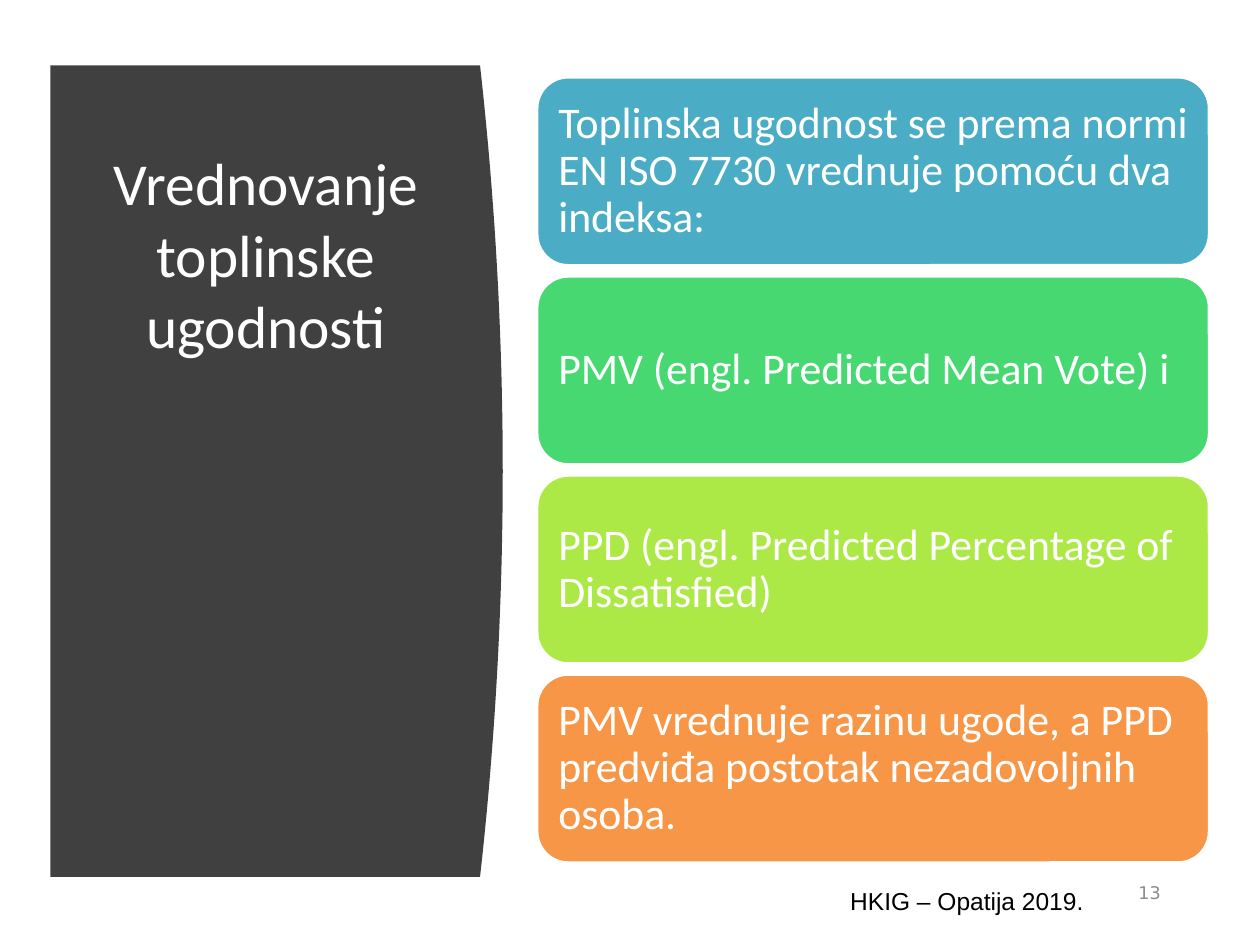
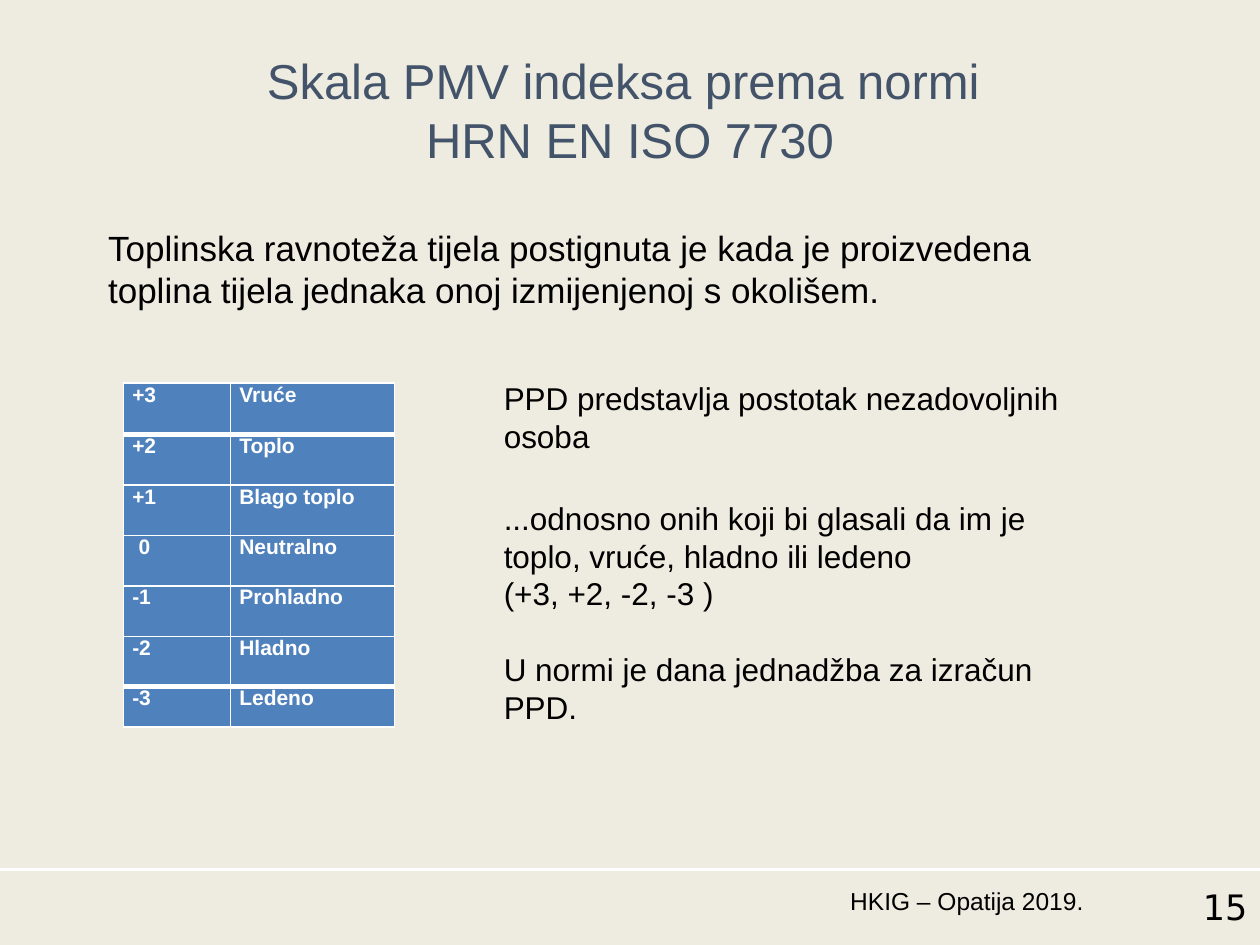
from lxml import etree
from pptx import Presentation
from pptx.dml.color import RGBColor
from pptx.enum.shapes import MSO_CONNECTOR, MSO_SHAPE
from pptx.enum.text import MSO_ANCHOR, MSO_AUTO_SIZE, PP_ALIGN
from pptx.oxml.ns import qn
from pptx.util import Inches, Pt

LEFT, CENTER, RIGHT = PP_ALIGN.LEFT, PP_ALIGN.CENTER, PP_ALIGN.RIGHT
TOP, MIDDLE = MSO_ANCHOR.TOP, MSO_ANCHOR.MIDDLE
FIXED = MSO_AUTO_SIZE.NONE
STRAIGHT = MSO_CONNECTOR.STRAIGHT
ROUNDED = MSO_SHAPE.ROUNDED_RECTANGLE

THEME = {
    "white": "FFFFFF",
    "sand": "EEECE1",
    "panel": "404040",
    "cards": ["4BACC6", "47D872", "ACE946", "F79646"],
    "cell": "4F81BD",
    "panel_title": ("Calibri", 34, "FFFFFF"),
    "title": ("Arial", 28, "435369"),
    "card": ("Calibri", 25, "FFFFFF"),
    "lead": ("Arial", 20, "000000"),
    "body": ("Arial", 18, "000000"),
    "table": ("Arial", 12, "FFFFFF"),
    "footer": ("Arial", 14, "000000"),
    "small_number": ("DejaVu Sans", 10, "8C8C8C"),
    "large_number": ("DejaVu Sans", 20, "000000"),
}


def rgb(name):
    return RGBColor.from_string(THEME.get(name, name))


def write(shape, lines, style, frame=None, para=None, box=None):
    if box:
        shape.left, shape.top, shape.width, shape.height = map(Inches, box)
    tf = shape.text_frame
    for key, value in {"word_wrap": True, "auto_size": FIXED,
                       "vertical_anchor": TOP, **(frame or {})}.items():
        setattr(tf, key, value)
    name, size, color = THEME[style]
    for i, line in enumerate(lines):
        p = tf.add_paragraph() if i else tf.paragraphs[0]
        p.text = line
        for key, value in {"alignment": LEFT, **(para or {})}.items():
            setattr(p, key, value)
        for r in p.runs:
            r.font.name, r.font.size = name, Pt(size)
            r.font.color.rgb = rgb(color)
            r.font.bold = style == "table"
    return tf


prs = Presentation()
prs.slide_width, prs.slide_height = Inches(10), Inches(7.5)

slides = []
for background, number, style, number_box in [
    ("white", "13", "small_number", (8.8, 6.95, 0.51, 0.4)),
    ("sand", "15", "large_number", (8.78, 6.98, 1.22, 0.52)),
]:
    s = prs.slides.add_slide(prs.slide_layouts[5])
    s.background.fill.solid()
    s.background.fill.fore_color.rgb = rgb(background)
    rule = s.shapes.add_connector(STRAIGHT, 0, Inches(6.9), Inches(10), Inches(6.9))
    rule.line.color.rgb = rgb("white")
    rule.line.width = Pt(1.5)
    etree.SubElement(rule._element.spPr, qn("a:effectLst"))
    for text, font, box in [
        ("HKIG – Opatija 2019.", "footer", (6.57, 6.98, 2.13, 0.52)),
        (number, style, number_box),
    ]:
        sp = s.shapes.add_textbox(*map(Inches, box))
        write(sp, [text], font, para={"alignment": RIGHT})
    slides.append(s)

s = slides[0]
panel_left, panel_top, panel_bottom = 0.4, 0.52, 6.96
edge, bulge, steps = 3.81, 0.18, 40
curve = []
for i in range(steps + 1):
    t = i / steps
    x = edge + bulge * 4 * t * (1 - t)
    y = panel_top + (panel_bottom - panel_top) * t
    curve.append((Inches(x), Inches(y)))
outline = s.shapes.build_freeform(Inches(panel_left), Inches(panel_top))
outline.add_line_segments(curve + [(Inches(panel_left), Inches(panel_bottom))])
panel = outline.convert_to_shape()
panel.shadow.inherit = False
panel.fill.solid()
panel.fill.fore_color.rgb = rgb("panel")
panel.line.fill.background()

title = s.shapes.title
write(title, ["Vrednovanje toplinske ugodnosti"], "panel_title",
      para={"alignment": CENTER}, box=(0.71, 1.11, 2.8, 5.24))
panel._element.addnext(title._element)

cards = [
    "Toplinska ugodnost se prema normi EN ISO 7730 vrednuje pomoću dva indeksa:",
    "PMV (engl. Predicted Mean Vote) i",
    "PPD (engl. Predicted Percentage of Dissatisfied)",
    "PMV vrednuje razinu ugode, a PPD predviđa postotak nezadovoljnih osoba.",
]
card_margins = {f"margin_{side}": Inches(0.1)
                for side in ("left", "top", "right", "bottom")}
for i, (text, color) in enumerate(zip(cards, THEME["cards"])):
    sp = s.shapes.add_shape(ROUNDED, Inches(4.26), Inches(0.61 + 1.58 * i),
                            Inches(5.34), Inches(1.5))
    sp.shadow.inherit = False
    sp.fill.solid()
    sp.fill.fore_color.rgb = rgb(color)
    sp.line.color.rgb = rgb("white")
    sp.line.width = Pt(2)
    write(sp, [text], "card", {"vertical_anchor": MIDDLE, **card_margins},
          {"line_spacing": 0.9})

s = slides[1]
write(s.shapes.title, ["Skala PMV indeksa prema normi \vHRN EN ISO 7730"], "title",
      {"margin_top": Inches(0.1)}, {"alignment": CENTER}, (0.5, 0.3, 9, 1.25))

scale = [("+3", "Vruće"), ("+2", "Toplo"), ("+1", "Blago toplo"), ("0", "Neutralno"),
         ("-1", "Prohladno"), ("-2", "Hladno"), ("-3", "Ledeno")]
row_heights = [0.41] + [0.4] * 5 + [0.32]
last = len(scale) - 1
frame = s.shapes.add_table(len(scale), 2, Inches(0.98), Inches(3.04),
                           Inches(2.15), Inches(sum(row_heights)))
table = frame.table
table.first_row = table.horz_banding = False
for column, width in zip(table.columns, (0.85, 1.3)):
    column.width = Inches(width)
for i, (row, texts) in enumerate(zip(table.rows, scale)):
    row.height = Inches(row_heights[i])
    widths = {"lnL": 1, "lnR": 1, "lnT": 3 if i in (1, last) else 1,
              "lnB": 3 if i in (0, last - 1) else 1}
    for cell, text in zip(row.cells, texts):
        for tag, width in widths.items():
            ln = etree.SubElement(cell._tc.get_or_add_tcPr(), qn(f"a:{tag}"),
                                  w=str(Pt(width)))
            fill = etree.SubElement(ln, qn("a:solidFill"))
            etree.SubElement(fill, qn("a:srgbClr"), val=THEME["white"])
        cell.fill.solid()
        cell.fill.fore_color.rgb = rgb("cell")
        cell.margin_left = Inches(0.12 if text == "0" else 0.07)
        cell.margin_top = cell.margin_right = cell.margin_bottom = 0
        write(cell, [text], "table")

lead = s.shapes.add_textbox(Inches(0.76), Inches(1.75), Inches(8.5), Inches(0.8))
write(lead, ["Toplinska ravnoteža tijela postignuta je kada je proizvedena",
             "toplina tijela jednaka onoj izmijenjenoj s okolišem."], "lead")

ppd = s.shapes.add_textbox(Inches(3.9), Inches(2.96), Inches(5), Inches(0.71))
write(ppd, ["PPD predstavlja postotak nezadovoljnih osoba"], "body")

votes = s.shapes.add_textbox(Inches(3.9), Inches(3.91), Inches(5), Inches(1.92))
tf = write(votes, [
    "...odnosno onih koji bi glasali da im je toplo, vruće, hladno ili ledeno",
    "(+3, +2, -2, -3 )",
    "U normi je dana jednadžba za izračun PPD.",
], "body")
tf.paragraphs[2].space_before = Pt(21.6)

prs.save("out.pptx")
